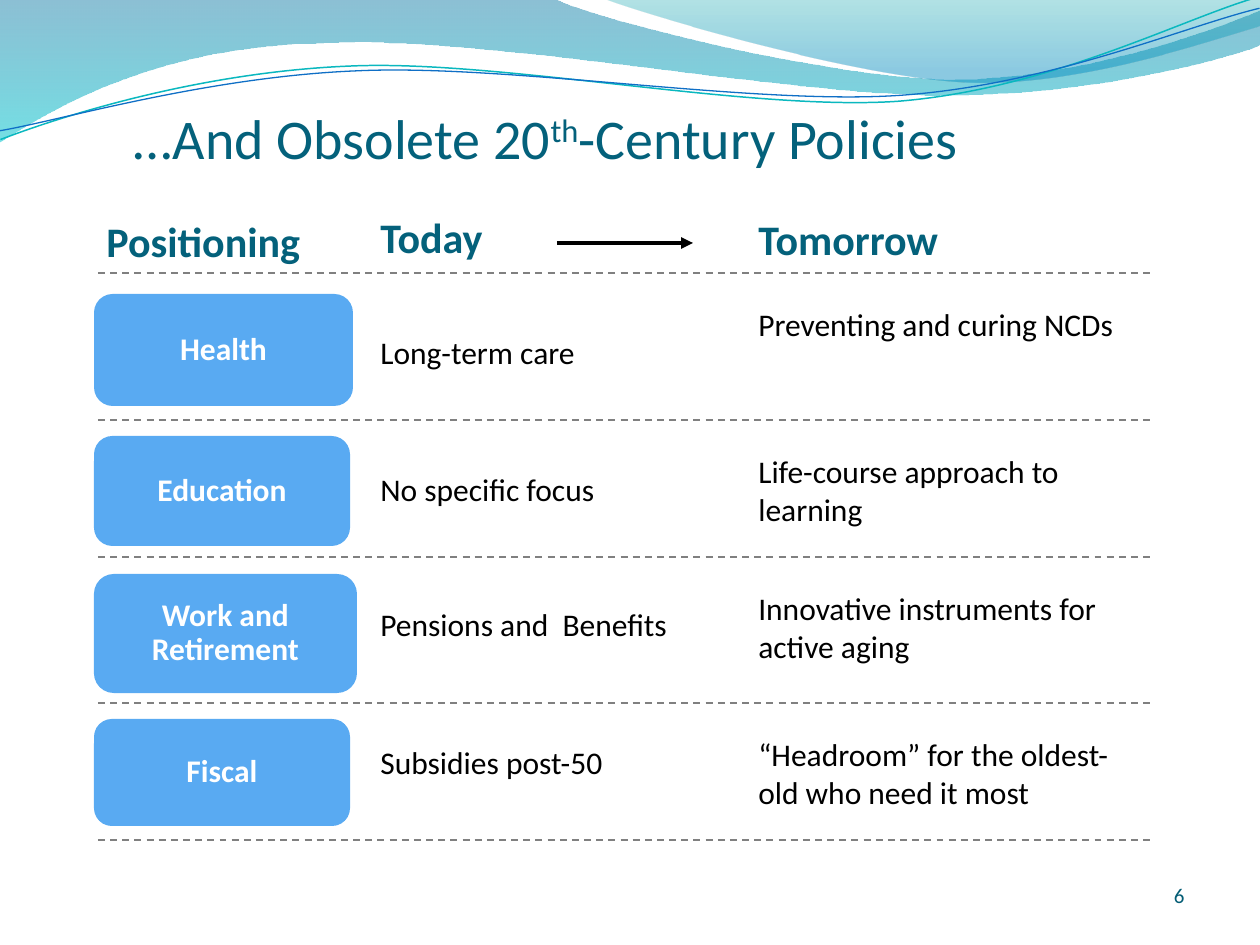
from lxml import etree
from pptx import Presentation, util as u
from pptx.dml.color import RGBColor
from pptx.enum import dml, shapes, text
from pptx.oxml.ns import qn

SCALE = 914400 // 126
COLORS = {
    "title": "04617B", "pill": "59AAF2", "white": "FFFFFF", "body": "000000",
    "rule": "808080", "number": "045D75", "teal": "0AB8BF", "blue": "0F6FC6",
    "deep": "0074A1", "aqua": "00C6CF", "sea": "00A1A9", "sky": "008BBF",
}


def px(value):
    return u.Emu(value * SCALE)


def rgb(name):
    return RGBColor.from_string(COLORS[name])


def write(frame, *parts, size=18, color="body", bold=False, align="LEFT", spacing=1.0):
    """Fill a text frame with one paragraph; a part is text or (text, baseline)."""
    frame.word_wrap = True
    paragraph = frame.paragraphs[0]
    paragraph.alignment = getattr(text.PP_ALIGN, align)
    paragraph.line_spacing = spacing
    for part in parts:
        words, baseline = part if isinstance(part, tuple) else (part, None)
        run = paragraph.add_run()
        run.text = words
        run.font.name = "Calibri"
        run.font.size = u.Pt(size)
        run.font.bold = bold
        run.font.color.rgb = rgb(color)
        if baseline:
            run.font._element.set("baseline", str(baseline))


class Deck:
    def __init__(self):
        self.presentation = Presentation()
        self.presentation.slide_width = u.Inches(10)
        self.presentation.slide_height = u.Inches(7.5)
        self.slide = self.presentation.slides.add_slide(self.presentation.slide_layouts[6])

    def freeform(self, start, segments, closed):
        """Draw lines (x, y) and cubic curves (x1, y1, x2, y2, x, y) from start."""
        points = [pair for segment in segments for pair in zip(segment[::2], segment[1::2])]
        builder = self.slide.shapes.build_freeform(*start, scale=SCALE)
        builder.add_line_segments(points, close=closed)
        shape = builder.convert_to_shape()
        shape.shadow.inherit = False
        lines = iter(list(shape._element.iter(qn("a:lnTo"))))
        for segment in segments:
            first = next(lines)
            if len(segment) == 6:
                first.tag = qn("a:cubicBezTo")
                for _ in range(2):
                    other = next(lines)
                    first.append(other[0])
                    other.getparent().remove(other)
        return shape

    def wave(self, start, segments, *stops):
        """Draw a filled wave; each stop is (position, color, opacity in percent)."""
        shape = self.freeform(start, segments, True)
        shape.line.fill.background()
        shape.fill.gradient()
        shape.fill.gradient_angle = 270
        for stop, (position, color, opacity) in zip(shape.fill.gradient_stops, stops):
            stop.position = position
            stop.color.rgb = rgb(color)
            color_element = stop._gs.find(qn("a:srgbClr"))
            etree.SubElement(color_element, qn("a:alpha")).set("val", str(opacity * 1000))

    def curve(self, start, segments, color, width):
        shape = self.freeform(start, segments, False)
        shape.rotation = 357.3
        shape.fill.background()
        shape.line.color.rgb = rgb(color)
        shape.line.width = u.Pt(width)

    def pill(self, left, top, width, height, label):
        shape = self.slide.shapes.add_shape(
            shapes.MSO_SHAPE.ROUNDED_RECTANGLE, *map(px, (left, top, width, height)))
        shape.shadow.inherit = False
        shape.fill.solid()
        shape.fill.fore_color.rgb = rgb("pill")
        shape.line.fill.background()
        frame = shape.text_frame
        frame.margin_left = frame.margin_right = frame.margin_top = frame.margin_bottom = 0
        frame.vertical_anchor = text.MSO_ANCHOR.MIDDLE
        write(frame, label, color="white", bold=True, align="CENTER", spacing=0.9)

    def label(self, left, top, width, height, *parts, inset=None, **style):
        box = self.slide.shapes.add_textbox(*map(px, (left, top, width, height)))
        if inset is not None:
            box.text_frame.margin_left = px(inset)
        write(box.text_frame, *parts, **style)

    def line(self, left, right, y, color, width, dashed=False, arrow=False):
        connector = self.slide.shapes.add_connector(
            shapes.MSO_CONNECTOR.STRAIGHT, px(left), px(y), px(right), px(y))
        connector.line.color.rgb = rgb(color)
        connector.line.width = u.Pt(width)
        if dashed:
            connector.line.dash_style = dml.MSO_LINE.DASH
        if arrow:
            line_element = connector.line._get_or_add_ln()
            etree.SubElement(line_element, qn("a:tailEnd")).set("type", "triangle")
        etree.SubElement(connector._element.spPr, qn("a:effectLst"))


def add_waves(deck):
    deck.wave((0, 0), [(554, -1), (600, 21, 837, 79, 955, 79),
                       (1075, 79, 1207, 33, 1260, 11), (1261, 45),
                       (1239, 55, 1096, 96, 940, 95), (784, 95, 481, 35, 324, 43),
                       (163, 45, 58, 105, -1, 142)],
              (0, "deep", 45), (1, "aqua", 55))
    deck.wave((604, -1), [(641, 14, 859, 78, 969, 82),
                          (1079, 86, 1211, 40, 1260, 26), (1260, 0)],
              (0, "sea", 30), (0.8, "sky", 45))
    deck.curve((-2, 110), [(58, 90, 199, 52, 350, 53), (499, 53, 745, 117, 896, 114),
                           (1049, 109, 1184, 45, 1260, 27)], "teal", 0.85)
    deck.curve((-2, 101), [(57, 94, 207, 57, 357, 58), (509, 58, 755, 112, 902, 108),
                           (1052, 104, 1188, 52, 1262, 38)], "blue", 0.75)


def add_policy_grid(deck):
    today, tomorrow = 368, 746
    rules = [273, 420, 557, 703, 840]
    headings = [("Positioning", 94, 215, 271), ("Today", today, 211, 229),
                ("Tomorrow", tomorrow, 213, 357)]
    # name, pill top, pill width, pill height, today text, its top, tomorrow text
    rows = [
        ("Health", 294, 259, 112, "Long-term care", 327, "Preventing and curing NCDs"),
        ("Education", 436, 256, 110, "No specific focus", 464,
         "Life-course approach to learning"),
        ("Work and Retirement", 574, 263, 119, "Pensions and  Benefits", 599,
         "Innovative instruments for active aging"),
        ("Fiscal", 719, 256, 107, "Subsidies post-50", 737,
         "“Headroom” for the oldest-old who need it most"),
    ]
    for heading, left, top, width in headings:
        deck.label(left, top, width, 58, heading,
                   size=24, color="title", bold=True, spacing=0.9)
    deck.line(557, 693, 243, "body", 2.25, arrow=True)
    for y in rules:
        deck.line(98, 1155, y, "rule", 1, dashed=True)
    for rule, (name, top, width, height, now, now_top, later) in zip(rules, rows):
        deck.pill(94, top, width, height, name)
        deck.label(today, now_top, 378, 50, now)
        deck.label(tomorrow, rule + 26, 391, 89, later)


def main():
    deck = Deck()
    add_waves(deck)
    deck.label(84, 97, 1408, 92, "…And Obsolete 20", ("th", 30000), "-Century Policies",
               inset=50, size=32, color="title")
    add_policy_grid(deck)
    deck.label(1092, 876, 105, 50, "6", size=12, color="number", align="RIGHT")
    deck.presentation.save("out.pptx")


if __name__ == "__main__":
    main()
